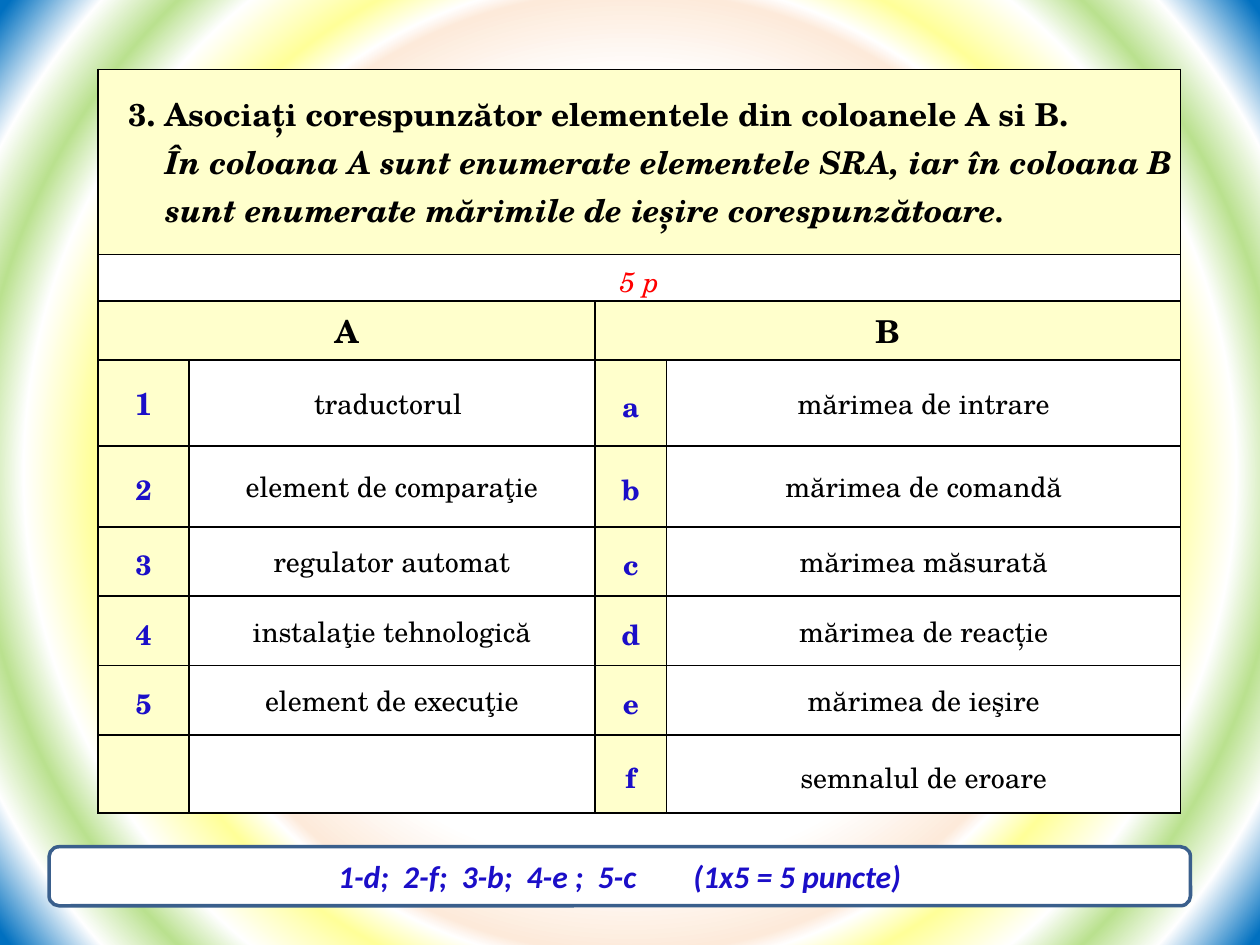
from dataclasses import dataclass, replace

from pptx import Presentation
from pptx.dml.color import RGBColor
from pptx.enum.shapes import MSO_SHAPE as Preset
from pptx.enum.text import MSO_ANCHOR as Anchor, PP_ALIGN as Align
from pptx.oxml import parse_xml
from pptx.oxml.ns import nsdecls, qn
from pptx.util import Cm, Pt


@dataclass(frozen=True)
class Theme:
    serif: str = "TeX Gyre Schola"
    sans: str = "Calibri"
    large: int = 18
    normal: int = 16
    black: str = "000000"
    white: str = "FFFFFF"
    cream: str = "FFFFCC"
    red: str = "FF0000"
    blue: str = "1B0EC8"
    outline: str = "3A5F8C"
    background: tuple = (
        (50, "FFFFFF"), (61, "FDEADA"), (63, "FFFFFF"), (68, "FFFF99"),
        (77, "FFFFFF"), (83, "BAE18F"), (90, "FFFFFF"), (99, "0070C0"),
    )


THEME = Theme()


@dataclass(frozen=True)
class Style:
    size: int = THEME.normal
    color: str = THEME.black
    font: str = THEME.serif
    bold: bool = False
    italic: bool = False
    align: Align = Align.CENTER
    spacing: float = 1.0
    margin: float = 0
    indent: float = 0


@dataclass(frozen=True)
class Pair:
    number: str
    element: str
    letter: str
    quantity: str
    height: float


ITEM = Style()
LETTER = Style(color=THEME.blue, bold=True, spacing=1.15)
NUMBER = replace(LETTER, margin=0.97, indent=-0.97)
FIRST_NUMBER = Style(THEME.large, THEME.blue, bold=True)
HEADING = Style(THEME.large, bold=True)
TASK = replace(HEADING, align=Align.LEFT, margin=1.22, indent=-0.74)
DETAILS = replace(TASK, italic=True, indent=0)
POINTS = Style(color=THEME.red, italic=True, spacing=1.15)
ANSWER = Style(THEME.large, THEME.blue, THEME.sans, bold=True, italic=True)

COLUMN_WIDTHS = (1.83, 8.18, 1.45, 10.36)
HEADER_HEIGHTS = (3.73, 0.81, 1.19)
PAIRS = (
    Pair("1", "traductorul ", "a", "mărimea de intrare", 1.73),
    Pair("2", "element de comparaţie", "b", "mărimea de comandă", 1.63),
    Pair("3", "regulator automat", "c", "mărimea măsurată", 1.4),
    Pair("4", "instalaţie tehnologică", "d", "mărimea de reacție", 1.4),
    Pair("5", "element de execuţie", "e", "mărimea de ieşire", 1.4),
    Pair("", "", "f", "semnalul de eroare", 1.57),
)
ANSWERS = ("1-d;", "2-f;", "3-b;", "4-e ;", "5-c")
ANSWER_GAP, SCORE_GAP = 4, 28.5


def rgb(color: str) -> RGBColor:
    return RGBColor.from_string(color)


def format_paragraph(paragraph, style: Style) -> None:
    paragraph.alignment = style.align
    if style.spacing != 1:
        paragraph.line_spacing = style.spacing
    if style.margin:
        properties = paragraph._p.get_or_add_pPr()
        properties.set("marL", str(Cm(style.margin)))
        properties.set("indent", str(Cm(style.indent)))
    for run in paragraph.runs:
        font = run.font
        font.name, font.size = style.font, Pt(style.size)
        font.bold, font.italic = style.bold, style.italic
        font.color.rgb = rgb(style.color)


def add_borders(cell) -> None:
    properties = cell._tc.get_or_add_tcPr()
    for side in ("lnL", "lnR", "lnT", "lnB"):
        properties.append(parse_xml(
            f'<a:{side} {nsdecls("a")} w="{Pt(1)}"><a:solidFill>'
            f'<a:srgbClr val="{THEME.black}"/></a:solidFill></a:{side}>'))


def write_cell(cell, *lines: tuple[str, Style]) -> None:
    frame = cell.text_frame
    frame.text = "\n".join(text for text, _ in lines)
    for paragraph, (_, style) in zip(frame.paragraphs, lines):
        format_paragraph(paragraph, style)


def paint_background(slide) -> None:
    """Fill the slide with rings that spread from its centre."""
    slide.background.fill.solid()
    stops = "".join(
        f'<a:gs pos="{position * 1000}"><a:srgbClr val="{color}"/></a:gs>'
        for position, color in THEME.background)
    gradient = parse_xml(
        f'<a:gradFill {nsdecls("a")} rotWithShape="1"><a:gsLst>{stops}</a:gsLst>'
        '<a:path path="circle"><a:fillToRect l="50000" t="50000" r="50000" b="50000"/>'
        '</a:path></a:gradFill>')
    properties = slide.element.find(".//" + qn("p:bgPr"))
    properties.replace(properties.find(qn("a:solidFill")), gradient)


def add_matching_table(slide) -> None:
    heights = HEADER_HEIGHTS + tuple(pair.height for pair in PAIRS)
    table = slide.shapes.add_table(
        len(heights), len(COLUMN_WIDTHS), Cm(1.98), Cm(1.4),
        Cm(sum(COLUMN_WIDTHS)), Cm(sum(heights))).table
    table.first_row = table.horz_banding = False
    for column, width in zip(table.columns, COLUMN_WIDTHS):
        column.width = Cm(width)
    for row_index, (row, height) in enumerate(zip(table.rows, heights)):
        row.height = Cm(height)
        for column_index, cell in enumerate(row.cells):
            cell.vertical_anchor = Anchor.MIDDLE
            cell.margin_left = cell.margin_right = Cm(0.13)
            cell.margin_top = cell.margin_bottom = 0
            add_borders(cell)
            label = column_index % 2 == 0 or row_index in (0, 2)
            cell.fill.solid()
            cell.fill.fore_color.rgb = rgb(
                THEME.cream if label and row_index != 1 else THEME.white)

    for row, first, last in ((0, 0, 3), (1, 0, 3), (2, 0, 1), (2, 2, 3)):
        table.cell(row, first).merge(table.cell(row, last))
    write_cell(
        table.cell(0, 0),
        ("3. Asociați corespunzător elementele din coloanele A si B.", TASK),
        ("În coloana A sunt enumerate elementele SRA, iar în coloana B "
         "sunt enumerate mărimile de ieșire corespunzătoare.", DETAILS))
    write_cell(table.cell(1, 0), ("5 p", POINTS))
    write_cell(table.cell(2, 0), ("A", HEADING))
    write_cell(table.cell(2, 2), ("B", HEADING))

    for row, pair in enumerate(PAIRS, start=len(HEADER_HEIGHTS)):
        number_style = FIRST_NUMBER if pair is PAIRS[0] else NUMBER
        quantity_style = replace(ITEM, spacing=1.15) if pair is PAIRS[-1] else ITEM
        entries = ((pair.number, number_style), (pair.element, ITEM),
                   (pair.letter, LETTER), (pair.quantity, quantity_style))
        for column, entry in enumerate(entries):
            if entry[0]:
                write_cell(table.cell(row, column), entry)


def add_gap(paragraph, points: float) -> None:
    """Add one space, widened by letter spacing."""
    run = paragraph.add_run()
    run.text = " "
    run.font._element.set("spc", str(round(points * 100)))


def add_answer_box(slide) -> None:
    shape = slide.shapes.add_shape(
        Preset.ROUNDED_RECTANGLE, Cm(0.99), Cm(17.07), Cm(23.01), Cm(1.19))
    shape.shadow.inherit = False
    shape.fill.solid()
    shape.fill.fore_color.rgb = rgb(THEME.white)
    shape.line.color.rgb = rgb(THEME.outline)
    shape.line.width = Pt(2)
    shape.text_frame.vertical_anchor = Anchor.MIDDLE
    paragraph = shape.text_frame.paragraphs[0]
    for answer in ANSWERS:
        paragraph.add_run().text = answer
        add_gap(paragraph, SCORE_GAP if answer == ANSWERS[-1] else ANSWER_GAP)
    paragraph.add_run().text = "(1x5 = 5 puncte)"
    format_paragraph(paragraph, ANSWER)


def main() -> None:
    presentation = Presentation()
    presentation.slide_width, presentation.slide_height = Cm(25.4), Cm(19.05)
    slide = presentation.slides.add_slide(presentation.slide_layouts[6])
    paint_background(slide)
    add_matching_table(slide)
    add_answer_box(slide)
    presentation.save("out.pptx")


if __name__ == "__main__":
    main()
